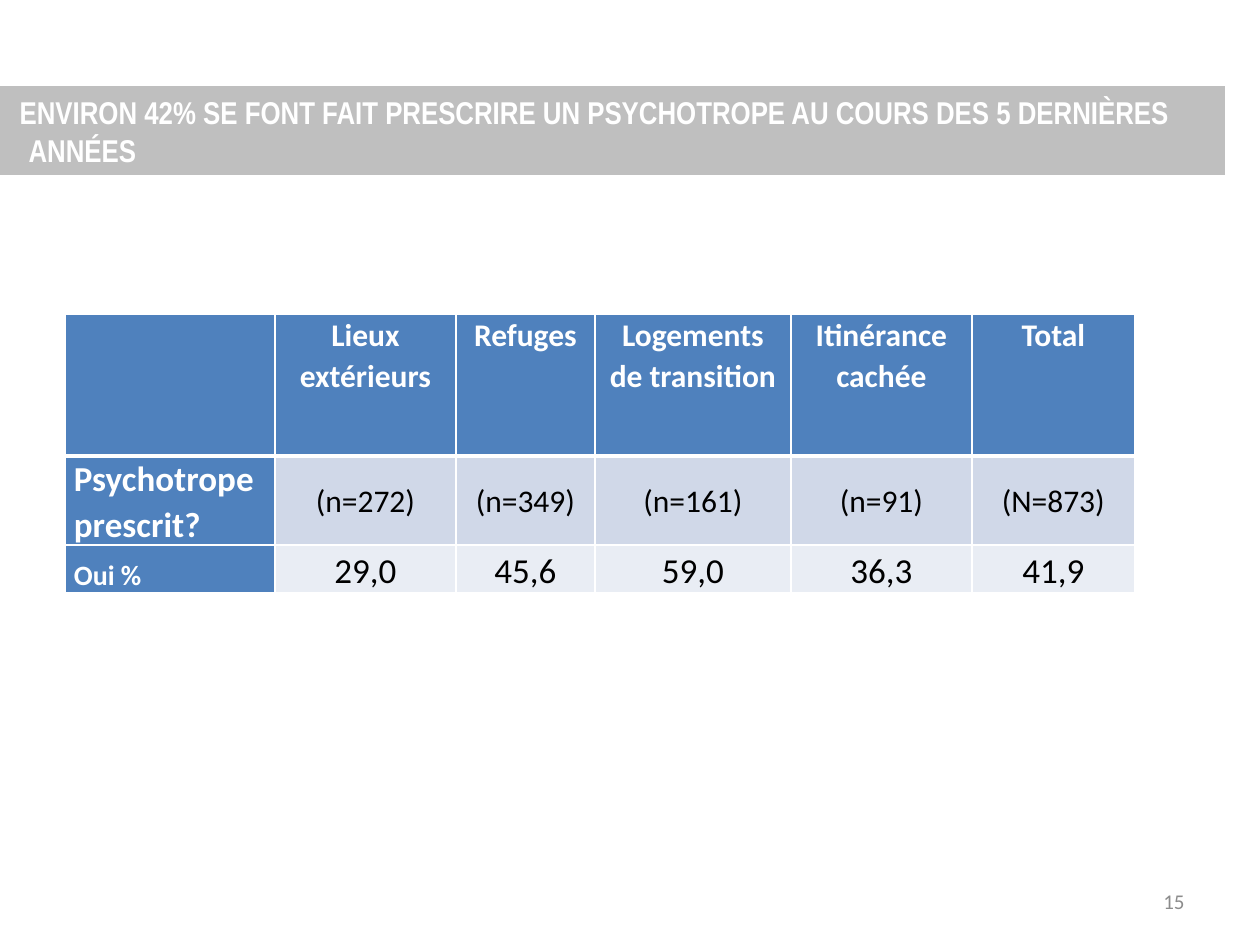
import pptx
import pptx.util
import pptx.dml.color
import pptx.enum.text
import pptx.oxml
import pptx.oxml.ns

EMU_PER_PX = 914400 // 126
ALIGN = pptx.enum.text.PP_ALIGN
ANCHOR = pptx.enum.text.MSO_ANCHOR

BLUE, WHITE, BLACK = "4F81BD", "FFFFFF", "000000"
COLUMN_WIDTHS = [210, 181, 139, 196, 181, 163]
ROW_HEIGHTS = [142, 89, 48]
ROWS = [
    ["", "Lieux extérieurs", "Refuges", "Logements de transition",
     "Itinérance cachée", "Total"],
    ["Psychotrope prescrit?", "(n=272)", "(n=349)", "(n=161)", "(n=91)", "(N=873)"],
    ["Oui %", "29,0", "45,6", "59,0", "36,3", "41,9"],
]
ROW_FILLS = [BLUE, "D0D8E8", "E9EDF4"]
ROW_ANCHORS = [ANCHOR.TOP, ANCHOR.MIDDLE, ANCHOR.BOTTOM]
LABEL_SIZES = [18, 20, 16]
VALUE_SIZES = [18, 18, 20]


def px(length):
    return pptx.util.Emu(length * EMU_PER_PX)


def color(hex_string):
    return pptx.dml.color.RGBColor.from_string(hex_string)


def fill(target, hex_string):
    target.fill.solid()
    target.fill.fore_color.rgb = color(hex_string)


def place(shape, left, top, width, height):
    shape.left, shape.top = px(left), px(top)
    shape.width, shape.height = px(width), px(height)


def format_paragraph(paragraph, size, hex_string, bold=False, align=ALIGN.LEFT,
                     font="Calibri"):
    paragraph.alignment = align
    paragraph.font.name = font
    paragraph.font.size = pptx.util.Pt(size)
    paragraph.font.bold = bold
    paragraph.font.color.rgb = color(hex_string)


def add_title(slide):
    title = slide.shapes.title
    place(title, 0, 86, 1225, 89)
    fill(title, "BFBFBF")
    frame = title.text_frame
    frame.text = ("ENVIRON 42% SE FONT FAIT PRESCRIRE UN PSYCHOTROPE "
                  "AU COURS DES 5 DERNIÈRES ANNÉES")
    frame.word_wrap = True
    frame.auto_size = pptx.enum.text.MSO_AUTO_SIZE.NONE
    frame.vertical_anchor = ANCHOR.MIDDLE
    heading = frame.paragraphs[0]
    format_paragraph(heading, 18, WHITE, bold=True, font="Arial Narrow")
    properties = heading._p.get_or_add_pPr()
    properties.set("marL", str(px(16)))
    properties.set("indent", str(px(-9)))


def set_borders(cell, top, bottom):
    """Draw white cell edges; top and bottom are widths in points."""
    properties = cell._tc.get_or_add_tcPr()
    for side, width in (("L", 1), ("R", 1), ("T", top), ("B", bottom)):
        properties.append(pptx.oxml.parse_xml(
            f'<a:ln{side} {pptx.oxml.ns.nsdecls("a")} w="{pptx.util.Pt(width)}">'
            f'<a:solidFill><a:srgbClr val="{WHITE}"/></a:solidFill></a:ln{side}>'))


def fill_cell(cell, text, row, column):
    is_header, is_label = row == 0, column == 0
    highlighted = is_header or is_label
    set_borders(cell, top=3 if row == 1 else 1, bottom=3 if is_header else 1)
    fill(cell, BLUE if highlighted else ROW_FILLS[row])
    cell.margin_left = cell.margin_right = px(9)
    cell.margin_top = cell.margin_bottom = 0
    cell.vertical_anchor = ANCHOR.BOTTOM if is_label else ROW_ANCHORS[row]
    cell.text = text
    paragraph = cell.text_frame.paragraphs[0]
    paragraph.line_spacing = 1.06
    format_paragraph(paragraph, (LABEL_SIZES if is_label else VALUE_SIZES)[row],
                     WHITE if highlighted else BLACK, bold=highlighted,
                     align=ALIGN.LEFT if is_label else ALIGN.CENTER)


def add_prescription_table(slide):
    table = slide.shapes.add_table(
        len(ROWS), len(COLUMN_WIDTHS), px(65), px(314),
        px(sum(COLUMN_WIDTHS)), px(sum(ROW_HEIGHTS))).table
    for column, width in zip(table.columns, COLUMN_WIDTHS):
        column.width = px(width)
    for row, height in zip(table.rows, ROW_HEIGHTS):
        row.height = px(height)
    for r, texts in enumerate(ROWS):
        for c, text in enumerate(texts):
            fill_cell(table.cell(r, c), text, r, c)


def add_page_number(slide, number):
    frame = slide.shapes.add_textbox(px(903), px(876), px(294), px(50)).text_frame
    frame.word_wrap = True
    frame.vertical_anchor = ANCHOR.MIDDLE
    frame.text = number
    format_paragraph(frame.paragraphs[0], 12, "8C8C8C", align=ALIGN.RIGHT)


def main():
    presentation = pptx.Presentation()
    presentation.slide_width, presentation.slide_height = px(1260), px(945)
    slide = presentation.slides.add_slide(
        presentation.slide_layouts.get_by_name("Title Only"))
    add_page_number(slide, "15")
    add_title(slide)
    add_prescription_table(slide)
    presentation.save("out.pptx")


if __name__ == "__main__":
    main()
